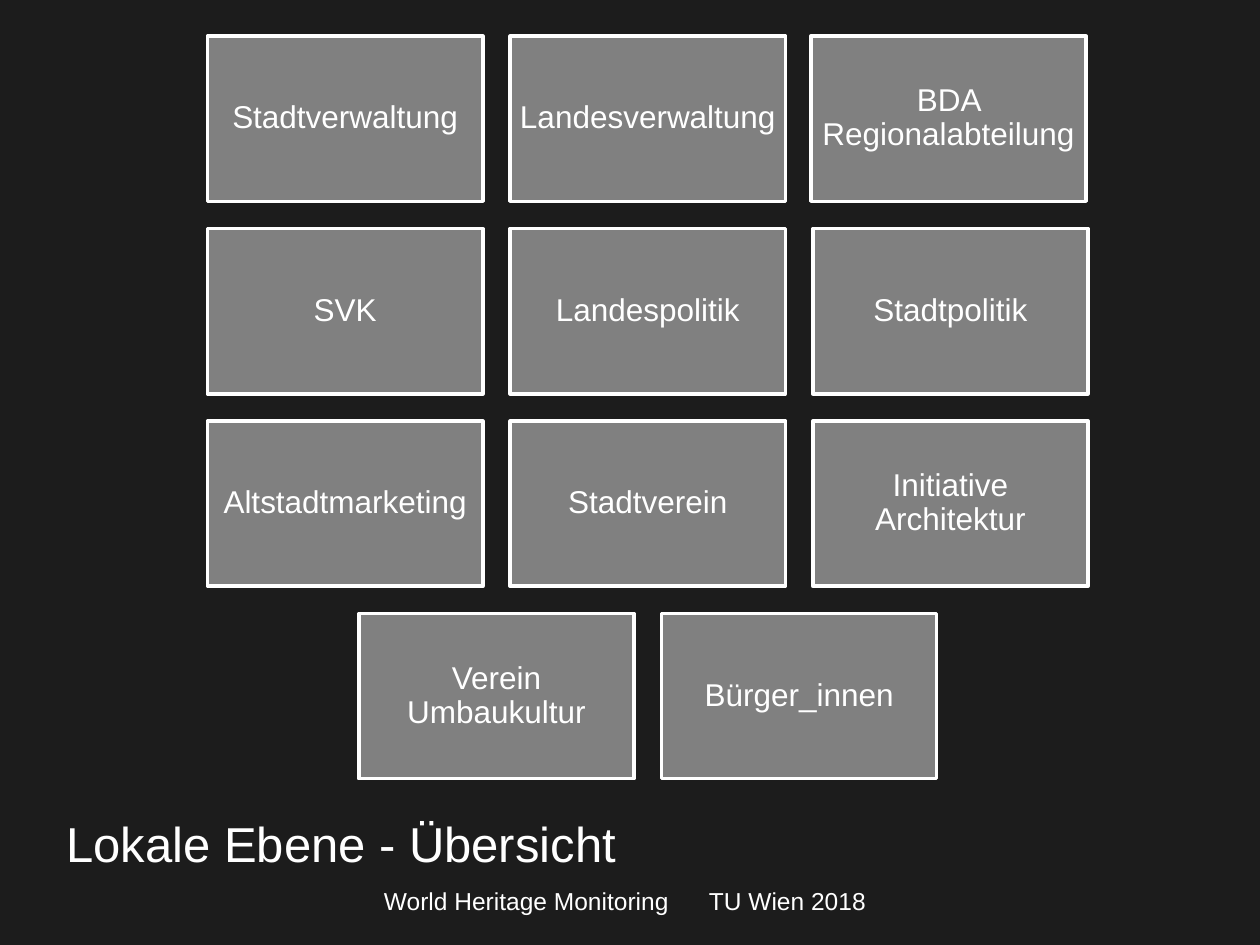
"""Build the slide with the overview of local actors."""
import pptx
import pptx.util
import pptx.dml.color
import pptx.enum.shapes
import pptx.enum.text
import pptx.oxml
import pptx.oxml.ns

Cm, Pt = pptx.util.Cm, pptx.util.Pt
Color = pptx.dml.color.RGBColor
Align = pptx.enum.text.PP_ALIGN
Anchor = pptx.enum.text.MSO_ANCHOR

ROWS = [
    ["Stadtverwaltung", "Landesverwaltung", "BDA Regionalabteilung"],
    ["SVK", "Landespolitik", "Stadtpolitik"],
    ["Altstadtmarketing", "Stadtverein", "Initiative Architektur"],
    ["Verein Umbaukultur", "Bürger_innen"],
]
NUDGE = {"BDA Regionalabteilung": -0.04}
TITLE = "Lokale Ebene - Übersicht"
FOOTER = "World Heritage Monitoring\tTU Wien 2018"

DARK = Color(0x1C, 0x1C, 0x1C)
GREY = Color(0x80, 0x80, 0x80)
WHITE = Color(0xFF, 0xFF, 0xFF)

MIDDLE, TOP = 13.06, 0.73
WIDE, HIGH = 5.55, 3.33
STEP_X, STEP_Y = 6.1, 3.88


def write(shape, text, size=18, align=Align.LEFT, anchor=Anchor.TOP,
          inset=None, left=None, lines=None, tab=None):
    """Put formatted text into a shape."""
    frame = shape.text_frame
    frame.word_wrap = True
    frame.vertical_anchor = anchor
    if inset is not None:
        frame.margin_left = frame.margin_right = Cm(inset)
        frame.margin_top = frame.margin_bottom = Cm(inset)
    if left is not None:
        frame.margin_left = Cm(left)
    para = frame.paragraphs[0]
    para.text = text
    para.alignment = align
    if lines:
        para.line_spacing = lines
    if tab:
        props = para._p.get_or_add_pPr()
        props.append(pptx.oxml.parse_xml(
            f'<a:tabLst {pptx.oxml.ns.nsdecls("a")}>'
            f'<a:tab pos="{Cm(tab)}" algn="l"/></a:tabLst>'))
    font = para.runs[0].font
    font.name, font.size = "Arial", Pt(size)
    font.color.rgb = WHITE


def add_box(shapes, text, x, y):
    """Add one actor box."""
    box = shapes.add_shape(pptx.enum.shapes.MSO_SHAPE.RECTANGLE,
                           Cm(x), Cm(y), Cm(WIDE), Cm(HIGH))
    box.shadow.inherit = False
    box.fill.solid()
    box.fill.fore_color.rgb = GREY
    box.line.color.rgb = WHITE
    box.line.width = Pt(2)
    write(box, text, align=Align.CENTER, anchor=Anchor.MIDDLE,
          inset=0.18, lines=0.9)


def main():
    """Build and save the deck."""
    deck = pptx.Presentation()
    deck.slide_width, deck.slide_height = Cm(25.4), Cm(19.05)
    slide = deck.slides.add_slide(deck.slide_layouts[6])
    slide.background.fill.solid()
    slide.background.fill.fore_color.rgb = DARK
    shapes = slide.shapes

    foot = shapes.add_textbox(Cm(2.69), Cm(17.73), Cm(19.81), Cm(0.61))
    write(foot, FOOTER, size=14, left=5.05, tab=6.55)

    for row, names in enumerate(ROWS):
        start = MIDDLE - ((len(names) - 1) * STEP_X + WIDE) / 2
        for col, name in enumerate(names):
            x = start + col * STEP_X + NUDGE.get(name, 0)
            add_box(shapes, name, x, TOP + row * STEP_Y)

    head = shapes.add_textbox(Cm(1.09), Cm(16.28), Cm(15.39), Cm(1.45))
    write(head, TITLE, size=28)
    deck.save("out.pptx")


if __name__ == "__main__":
    main()
